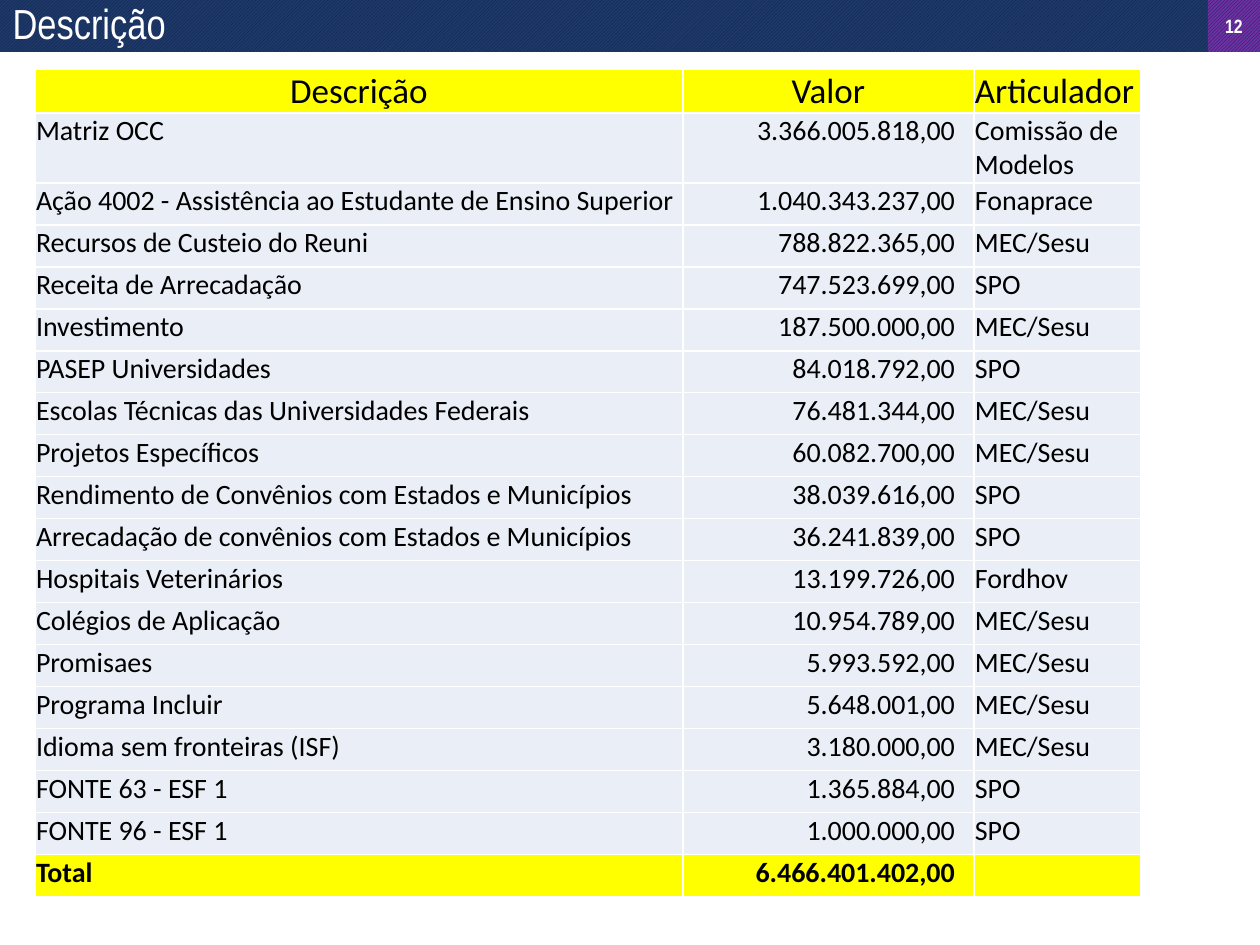
from pptx import Presentation
from pptx import util as u
from pptx.dml.color import RGBColor
from pptx.enum import dml, shapes, text

COLORS = {"white": "FFFFFF", "black": "000000", "navy": "002060", "blue": "203864",
          "purple": "7030A0", "yellow": "FFFF00", "pale": "EAEFF7"}


def px(n):
    """Pixels at 126 to the inch, as EMU."""
    return u.Emu(round(n * 914400 / 126))


def style(paragraph, size, font, color, bold=False):
    paragraph.font.size = u.Pt(size)
    paragraph.font.name = font
    paragraph.font.bold = bold
    paragraph.font.color.rgb = RGBColor.from_string(COLORS[color])


prs = Presentation()
prs.slide_width, prs.slide_height = px(1260), px(945)
slide = prs.slides.add_slide(prs.slide_layouts[5])

# Header band, page number and title
title = slide.shapes.title
for left, width, back, label in [(0, 1208, "blue", ""), (1208, 52, "purple", "12")]:
    band = slide.shapes.add_shape(shapes.MSO_SHAPE.RECTANGLE, px(left), 0, px(width), px(52))
    band.shadow.inherit = False
    band.line.fill.background()
    band.fill.patterned()
    band.fill.pattern = dml.MSO_PATTERN.DARK_UPWARD_DIAGONAL
    band.fill.fore_color.rgb = RGBColor.from_string(COLORS["navy"])
    band.fill.back_color.rgb = RGBColor.from_string(COLORS[back])
    if label:
        frame = band.text_frame
        frame.margin_left = frame.margin_right = 0
        frame.vertical_anchor = text.MSO_ANCHOR.MIDDLE
        frame.text = label
        frame.paragraphs[0].alignment = text.PP_ALIGN.CENTER
        style(frame.paragraphs[0], 11, "Arial Narrow", "white", bold=True)
    title.element.addprevious(band.element)  # keep the title in front

title.left, title.top, title.width, title.height = px(0), px(6), px(1147), px(39)
title.text_frame.text = "Descrição"
title.text_frame.auto_size = text.MSO_AUTO_SIZE.NONE
title.text_frame.vertical_anchor = text.MSO_ANCHOR.MIDDLE
heading = title.text_frame.paragraphs[0]
heading.alignment = text.PP_ALIGN.LEFT
heading.line_spacing = 0.9
style(heading, 24, "Arial Narrow", "white")

# Budget table
budget = [
    ("Descrição", "Valor", "Articulador"),
    ("Matriz OCC", "3.366.005.818,00", "Comissão de Modelos"),
    ("Ação 4002 - Assistência ao Estudante de Ensino Superior", "1.040.343.237,00", "Fonaprace"),
    ("Recursos de Custeio do Reuni", "788.822.365,00", "MEC/Sesu"),
    ("Receita de Arrecadação", "747.523.699,00", "SPO"),
    ("Investimento", "187.500.000,00", "MEC/Sesu"),
    ("PASEP Universidades", "84.018.792,00", "SPO"),
    ("Escolas Técnicas das Universidades Federais", "76.481.344,00", "MEC/Sesu"),
    ("Projetos Específicos", "60.082.700,00", "MEC/Sesu"),
    ("Rendimento de Convênios com Estados e Municípios", "38.039.616,00", "SPO"),
    ("Arrecadação de convênios com Estados e Municípios", "36.241.839,00", "SPO"),
    ("Hospitais Veterinários", "13.199.726,00", "Fordhov"),
    ("Colégios de Aplicação", "10.954.789,00", "MEC/Sesu"),
    ("Promisaes", "5.993.592,00", "MEC/Sesu"),
    ("Programa Incluir", "5.648.001,00", "MEC/Sesu"),
    ("Idioma sem fronteiras (ISF)", "3.180.000,00", "MEC/Sesu"),
    ("FONTE 63 - ESF 1", "1.365.884,00", "SPO"),
    ("FONTE 96 - ESF 1", "1.000.000,00", "SPO"),
    ("Total", "6.466.401.402,00", ""),
]
last = len(budget) - 1
heights = [43, 70] + [42] * (last - 1)
widths = [648, 291, 167]
table = slide.shapes.add_table(len(budget), len(widths), px(35), px(69),
                               px(sum(widths)), px(sum(heights))).table
table.first_row = table.horz_banding = False
for column, width in zip(table.columns, widths):
    column.width = px(width)

for r, entries in enumerate(budget):
    table.rows[r].height = px(heights[r])
    for c, entry in enumerate(entries):
        cell = table.cell(r, c)
        cell.fill.solid()
        cell.fill.fore_color.rgb = RGBColor.from_string(
            COLORS["yellow" if r in (0, last) else "pale"])
        cell.margin_left = cell.margin_right = cell.margin_top = px(1)
        cell.margin_bottom = 0
        cell.text = entry
        paragraph = cell.text_frame.paragraphs[0]
        if r == 0 and c < 2:
            paragraph.alignment = text.PP_ALIGN.CENTER
        elif c == 1:
            paragraph.alignment = text.PP_ALIGN.RIGHT
            cell.margin_right = px(19)
        style(paragraph, 20 if r == 0 else 16, "Calibri", "black", bold=r == last)

prs.save("out.pptx")
